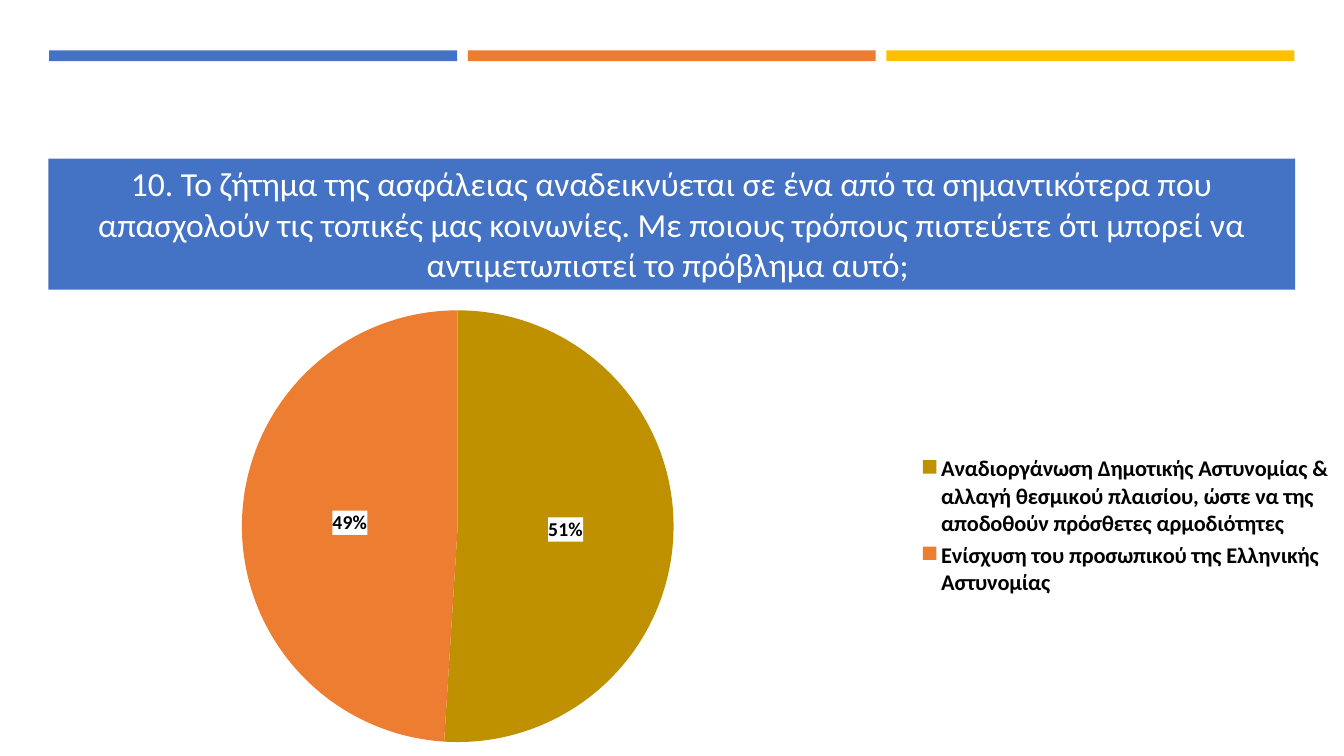
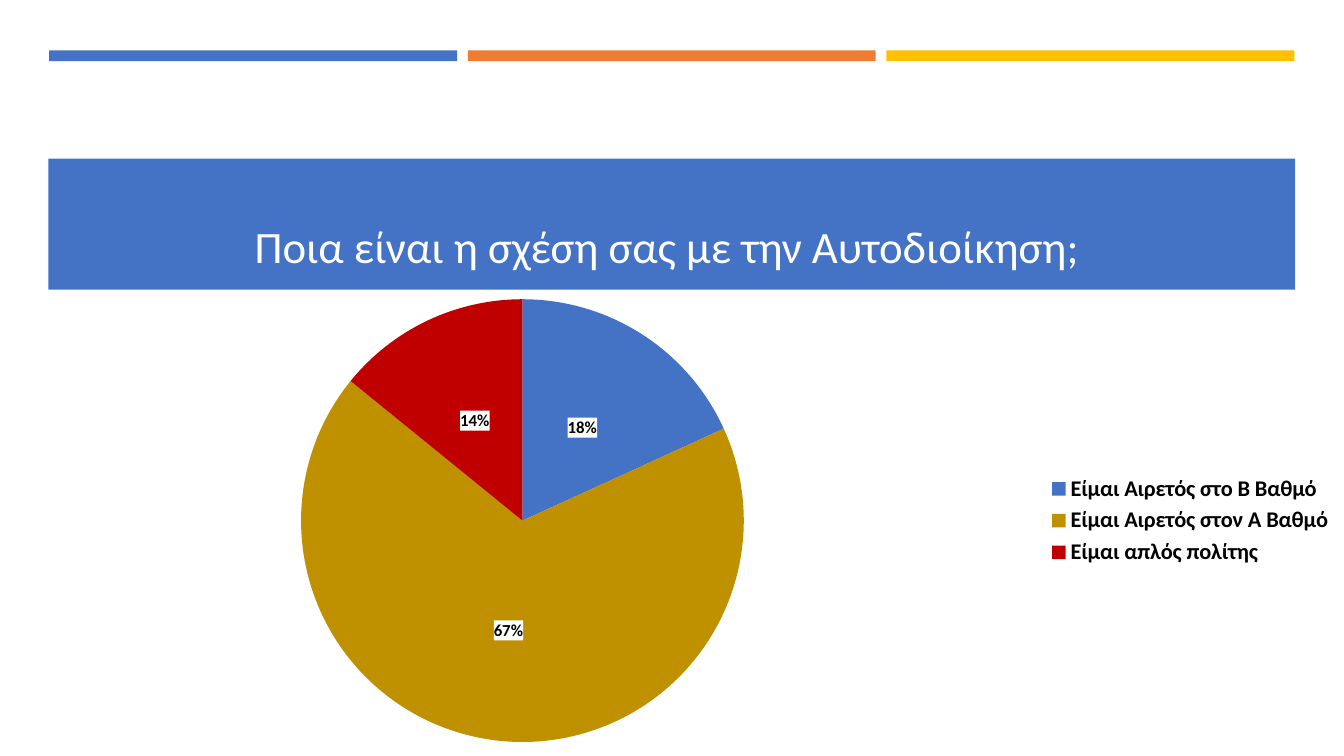
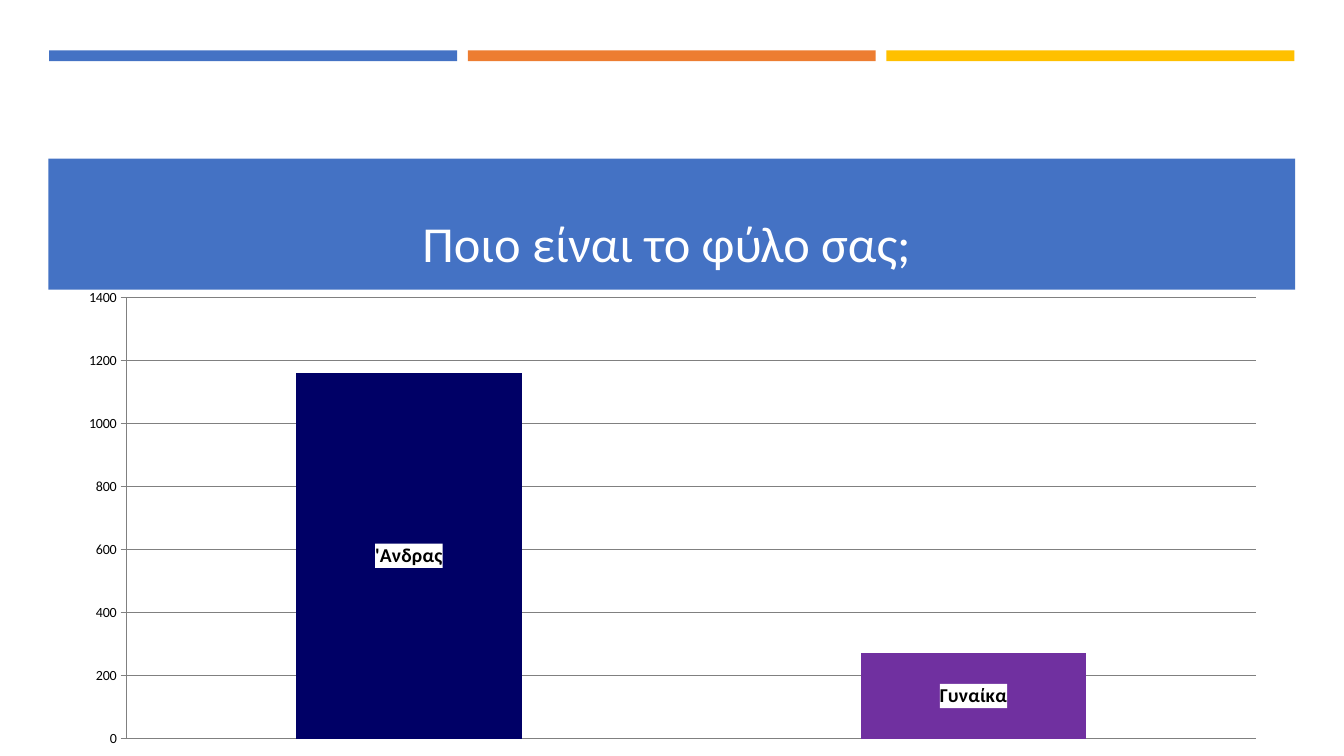
"""Builds three survey slides, each with a title band and one chart."""
from lxml import etree
from pptx import Presentation
from pptx.chart.data import CategoryChartData
from pptx.dml.color import RGBColor
from pptx.enum.chart import XL_CHART_TYPE, XL_LABEL_POSITION, XL_LEGEND_POSITION, XL_TICK_MARK
from pptx.enum.shapes import MSO_SHAPE
from pptx.enum.text import MSO_ANCHOR, MSO_AUTO_SIZE, PP_ALIGN
from pptx.util import Cm, Pt

PIE = XL_CHART_TYPE.PIE
COLUMN = XL_CHART_TYPE.COLUMN_STACKED
LABEL_CENTER = XL_LABEL_POSITION.CENTER
LEGEND_RIGHT = XL_LEGEND_POSITION.RIGHT
TICK_OUTSIDE = XL_TICK_MARK.OUTSIDE
RECTANGLE = MSO_SHAPE.RECTANGLE
ANCHOR_BOTTOM = MSO_ANCHOR.BOTTOM
NO_AUTOFIT = MSO_AUTO_SIZE.NONE
ALIGN_CENTER = PP_ALIGN.CENTER

FONT = "Calibri"
BLUE = RGBColor(0x44, 0x72, 0xC4)
ORANGE = RGBColor(0xED, 0x7D, 0x31)
YELLOW = RGBColor(0xFF, 0xC0, 0x00)
GOLD = RGBColor(0xBF, 0x90, 0x00)
RED = RGBColor(0xC0, 0x00, 0x00)
NAVY = RGBColor(0x00, 0x00, 0x66)
PURPLE = RGBColor(0x70, 0x30, 0xA0)
GRAY = RGBColor(0x80, 0x80, 0x80)
BLACK = RGBColor(0x00, 0x00, 0x00)
WHITE = RGBColor(0xFF, 0xFF, 0xFF)

TITLE_ONLY = 5
STRIPE_PITCH = 10.55
TITLE_AREA = (1.63, 4.17, 30.63, 2.82)
LABEL_FILL = (
    '<c:spPr xmlns:c="http://schemas.openxmlformats.org/drawingml/2006/chart" '
    'xmlns:a="http://schemas.openxmlformats.org/drawingml/2006/main">'
    f'<a:solidFill><a:srgbClr val="{WHITE}"/></a:solidFill></c:spPr>'
)


def lengths(area):
    """Turn left, top, width and height in centimetres into lengths."""
    return [Cm(value) for value in area]


def style_font(font, size, color, bold=False):
    """Apply the deck font with a size, colour and weight."""
    font.name = FONT
    font.size = Pt(size)
    font.bold = bold
    font.color.rgb = color


def add_band(slide, area, color):
    """Add a plain filled rectangle."""
    band = slide.shapes.add_shape(RECTANGLE, *lengths(area))
    band.shadow.inherit = False
    band.fill.solid()
    band.fill.fore_color.rgb = color
    band.line.fill.background()
    return band


def dress_layout(layout, slide):
    """Draw the stripes and title band and move them to the layout."""
    for placeholder in list(layout.placeholders)[1:]:
        placeholder._element.getparent().remove(placeholder._element)
    bands = [add_band(slide, (1.24 + column * STRIPE_PITCH, 1.27, 10.28, 0.27), color)
             for column, color in enumerate((BLUE, ORANGE, YELLOW))]
    bands.append(add_band(slide, (1.22, 4, 31.42, 3.3), BLUE))
    for band in bands:
        layout.shapes._spTree.append(band._element)


def set_title(slide, text, size, area=TITLE_AREA):
    """Place and format the question in the title placeholder."""
    title = slide.shapes.title
    title.left, title.top, title.width, title.height = lengths(area)
    frame = title.text_frame
    frame.text = text
    frame.word_wrap = True
    frame.auto_size = NO_AUTOFIT
    frame.vertical_anchor = ANCHOR_BOTTOM
    paragraph = frame.paragraphs[0]
    paragraph.alignment = ALIGN_CENTER
    style_font(paragraph.font, size, WHITE)


def add_survey_chart(slide, kind, area, answers, label_size):
    """Add a one-series chart from (answer, value, colour) rows with white labels."""
    data = CategoryChartData()
    data.categories = [answer for answer, _, _ in answers]
    data.add_series("Series 1", [value for _, value, _ in answers])
    chart = slide.shapes.add_chart(kind, *lengths(area), data).chart
    chart.has_title = False
    chart.has_legend = False
    style_font(chart.font, 10, BLACK)
    plot = chart.plots[0]
    plot.vary_by_categories = kind == PIE
    for index, (_, _, color) in enumerate(answers):
        fill = plot.series[0].points[index].format.fill
        fill.solid()
        fill.fore_color.rgb = color
    plot.has_data_labels = True
    labels = plot.data_labels
    style_font(labels.font, label_size, BLACK, bold=True)
    labels.position = LABEL_CENTER
    labels._element.find("{*}txPr").addprevious(etree.fromstring(LABEL_FILL))
    return chart


def add_pie(slide, area, answers, label_size):
    """Add a pie with percentages and a legend on the right."""
    chart = add_survey_chart(slide, PIE, area, answers, label_size)
    labels = chart.plots[0].data_labels
    labels.show_value = True
    labels.number_format = '0"%"'
    labels.number_format_is_linked = False
    chart.has_legend = True
    chart.legend.position = LEGEND_RIGHT
    chart.legend.include_in_layout = False
    style_font(chart.legend.font, 16, BLACK, bold=True)


def add_columns(slide, area, answers, label_size):
    """Add columns named by their labels, with a value axis and grid."""
    chart = add_survey_chart(slide, COLUMN, area, answers, label_size)
    plot = chart.plots[0]
    plot.gap_width = 150
    plot.overlap = 100
    plot.data_labels.show_value = False
    plot.data_labels.show_category_name = True
    chart.category_axis.visible = False
    axis = chart.value_axis
    axis.major_tick_mark = TICK_OUTSIDE
    axis.has_major_gridlines = True
    for line in (axis.format.line, axis.major_gridlines.format.line):
        line.color.rgb = GRAY
        line.width = Pt(0.75)


def main():
    """Build and save the deck."""
    deck = Presentation()
    deck.slide_width, deck.slide_height = Cm(33.87), Cm(19.05)
    layout = deck.slide_layouts[TITLE_ONLY]
    safety, relation, gender = [deck.slides.add_slide(layout) for _ in range(3)]
    dress_layout(layout, safety)

    set_title(safety, "10. Το ζήτημα της ασφάλειας αναδεικνύεται σε ένα από τα σημαντικότερα "
              "που απασχολούν τις τοπικές μας κοινωνίες. Με ποιους τρόπους πιστεύετε ότι "
              "μπορεί να αντιμετωπιστεί το πρόβλημα αυτό; ", 24, (1.24, 3.96, 31.37, 3.33))
    add_pie(safety, (0, 7.47, 33.87, 11.58), [
        ("Αναδιοργάνωση Δημοτικής Αστυνομίας & αλλαγή θεσμικού πλαισίου, "
         "ώστε να της αποδοθούν πρόσθετες αρμοδιότητες", 51, GOLD),
        ("Ενίσχυση του προσωπικού της Ελληνικής Αστυνομίας", 49, ORANGE),
    ], 14)

    set_title(relation, "Ποια είναι η σχέση σας με την Αυτοδιοίκηση; ", 32)
    add_pie(relation, (0, 7.19, 33.87, 11.86), [
        ("Είμαι Αιρετός στο Β Βαθμό", 18, BLUE),
        ("Είμαι Αιρετός στον Α Βαθμό", 67, GOLD),
        ("Είμαι απλός πολίτης", 14, RED),
    ], 12)

    set_title(gender, "Ποιο είναι το φύλο σας; ", 36)
    add_columns(gender, (1.63, 7.06, 30.63, 11.99), [
        ("'Ανδρας", 1160, NAVY),
        ("Γυναίκα", 270, PURPLE),
    ], 14)
    deck.save("out.pptx")


if __name__ == "__main__":
    main()
